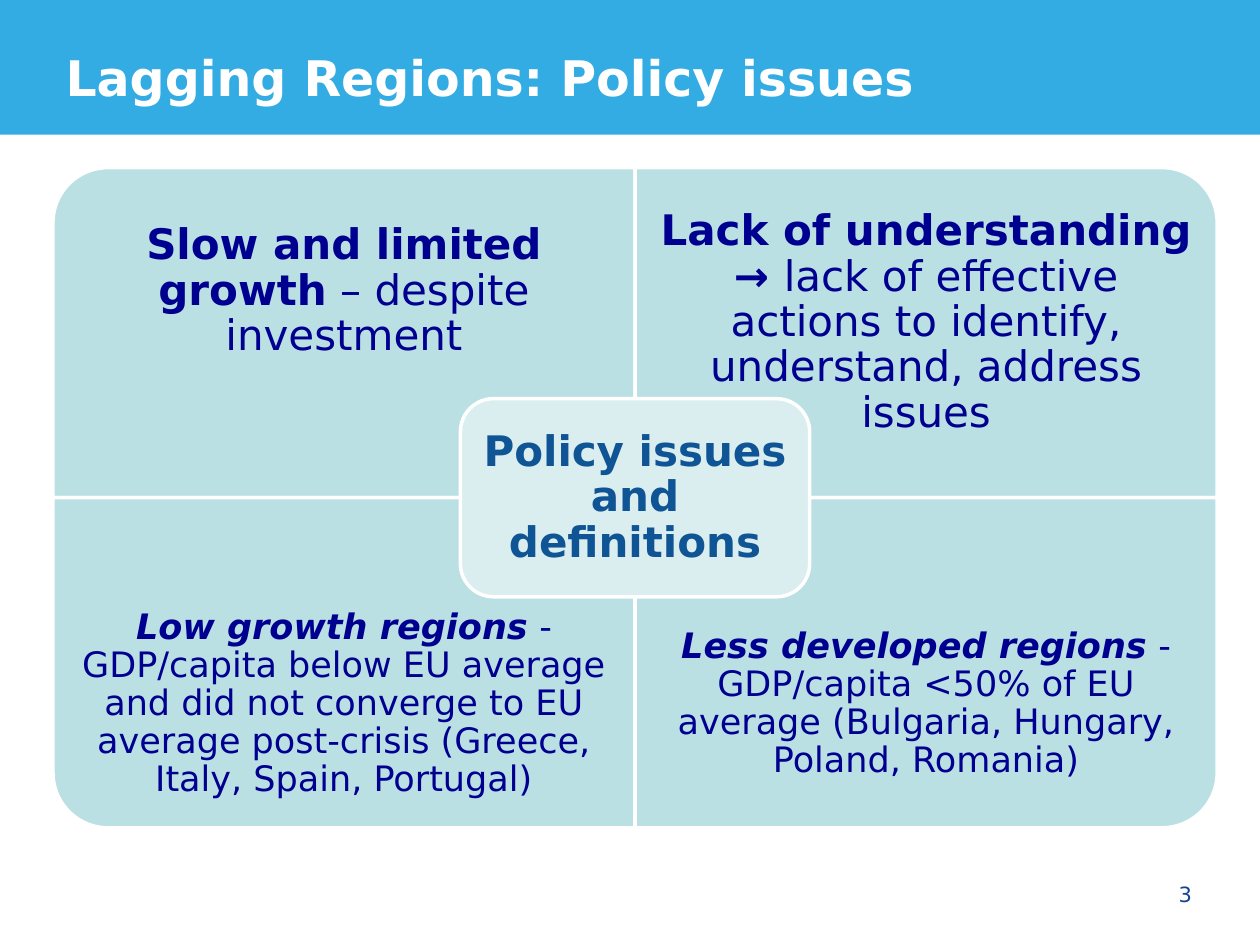
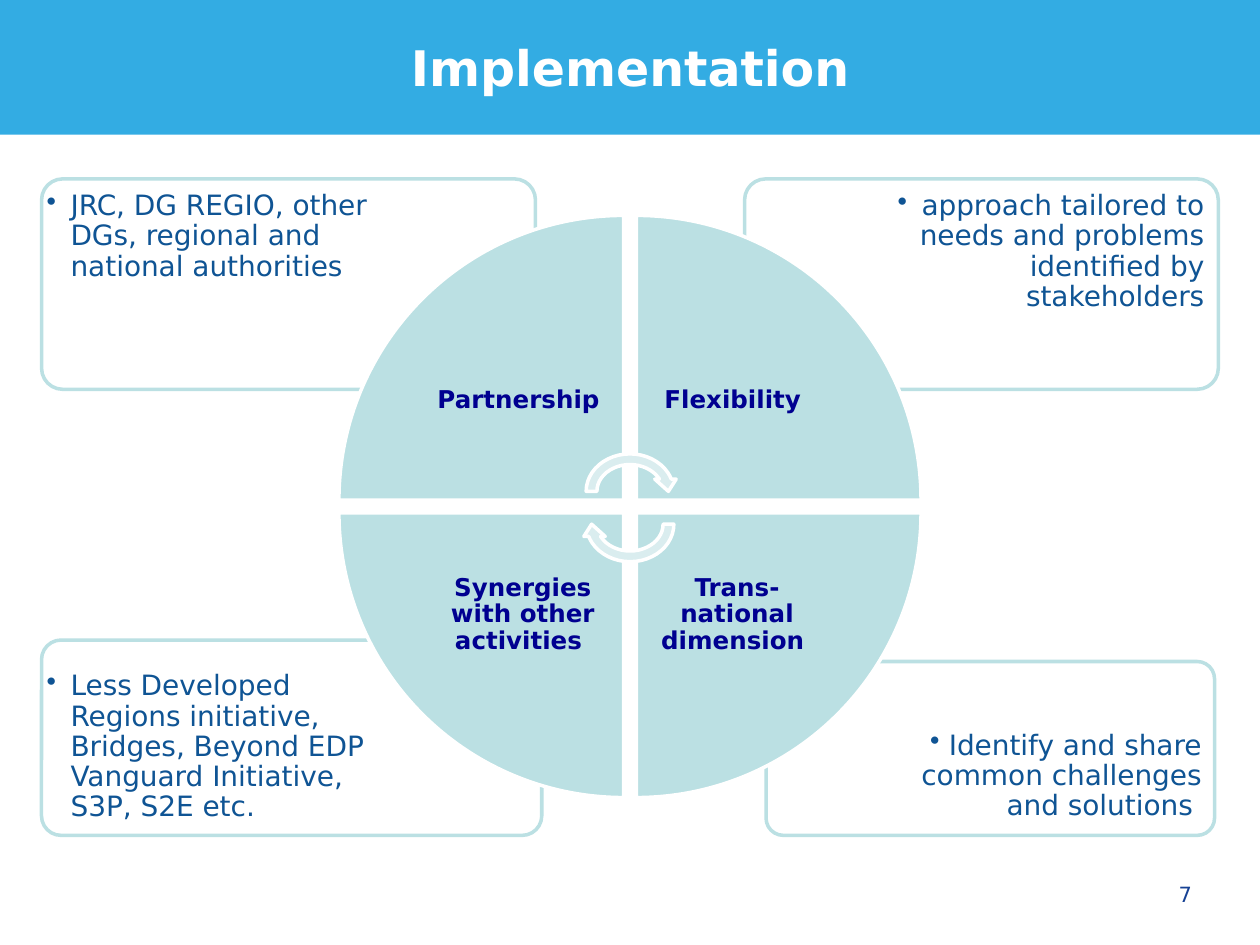
from lxml import etree
from pptx import Presentation
from pptx.dml.color import RGBColor
from pptx.enum.shapes import MSO_SHAPE
from pptx.enum.text import MSO_ANCHOR, MSO_AUTO_SIZE, PP_ALIGN
from pptx.oxml.ns import qn
from pptx.util import Inches, Pt

RECT, ROUND = MSO_SHAPE.RECTANGLE, MSO_SHAPE.ROUNDED_RECTANGLE
CORNER, WEDGE = MSO_SHAPE.ROUND_1_RECTANGLE, MSO_SHAPE.PIE_WEDGE
ARROW = MSO_SHAPE.CIRCULAR_ARROW
LEFT, MID, RIGHT = PP_ALIGN.LEFT, PP_ALIGN.CENTER, PP_ALIGN.RIGHT
TOP, HALF, BASE = MSO_ANCHOR.TOP, MSO_ANCHOR.MIDDLE, MSO_ANCHOR.BOTTOM

W, H = 10, 7.5
FACE = "DejaVu Sans"
HUE = {"band": "33ACE3", "teal": "BBE0E3", "pale": "DAEDEF", "white": "FFFFFF",
       "navy": "000090", "blue": "0F5494", "page": "164194"}
CELLS = [(0, 0), (0, 1), (1, 0), (1, 1)]  # row, column
TURNS = [0, 90, 270, 180]


def put(slide, kind, box, fill, line=None, turn=0):
    """Add a shape that fills the box after its turn."""
    x, y, w, h = box
    if turn in (90, 270):
        x, y, w, h = x + (w - h) / 2, y + (h - w) / 2, h, w
    shape = slide.shapes.add_shape(kind, *map(Inches, (x, y, w, h)))
    shape.rotation = turn
    shape.shadow.inherit = False
    shape.fill.solid()
    shape.fill.fore_color.rgb = RGBColor.from_string(HUE[fill])
    if line:
        shape.line.color.rgb = RGBColor.from_string(HUE[line])
        shape.line.width = Pt(2)
    else:
        shape.line.fill.background()
    return shape


def say(shape, box, runs, size, hue, align=MID, anchor=HALF, pad=(0, 0, 0, 0),
        space=0.9, dent=None):
    """Place a text holder and write runs of (text, font styles) in it."""
    for name, value in zip(("left", "top", "width", "height"), box):
        setattr(shape, name, Inches(value))
    frame = shape.text_frame
    look = {"word_wrap": True, "auto_size": MSO_AUTO_SIZE.NONE, "vertical_anchor": anchor}
    for side, value in zip(("left", "top", "right", "bottom"), pad):
        look["margin_" + side] = Inches(value)
    for name, value in look.items():
        setattr(frame, name, value)
    para = frame.paragraphs[0]
    para.alignment = align
    if dent is not None:
        props = para._p.get_or_add_pPr()
        props.set("marL", str(Inches(dent)))
        props.set("indent", str(-Inches(dent)))
        etree.SubElement(props, qn("a:buChar"), char="•")
    para.line_spacing = space
    for text, style in runs:
        run = para.add_run()
        run.text = text
        for name, value in {"name": FACE, "size": Pt(size), **style}.items():
            setattr(run.font, name, value)
        run.font.color.rgb = RGBColor.from_string(HUE[hue])


BOLD, PLAIN = {"bold": True}, {"bold": False}
SLANT = {"bold": True, "italic": True}

deck = Presentation()
deck.slide_width, deck.slide_height = Inches(W), Inches(H)

# Shared parts: title, page number and a band on the master
slides = []
for title, page, align, top in [("Lagging Regions: Policy issues", "3", LEFT, 0.33),
                                ("Implementation", "7", MID, 0.25)]:
    slide = deck.slides.add_slide(deck.slide_layouts[5])
    say(slide.shapes.title, (0.52, top, W - 1.04, 0.5), [(title, BOLD)], 28, "white",
        align, TOP, space=1.1)
    say(slide.shapes.add_textbox(0, 0, 0, 0), (7.23, 6.9, 2.33, 0.4), [(page, PLAIN)],
        12, "page", RIGHT, pad=(0.1, 0, 0.1, 0), space=1)
    slides.append(slide)
issues, action = slides
band = put(issues, RECT, (0, 0, W, 1.07), "band")
deck.slide_master.shapes._spTree.insert(2, band._element)

# Policy issues: four quarters around a centre label
COL, ROW = 4.62, 2.62
X, Y = 0.42, 1.33
DEEP = ROW * 0.75
quarters = [
    (24, 0.19, 0, [("Slow and limited growth", BOLD), (" – despite investment", PLAIN)]),
    (24, 0.19, 0.25, [("Lack of understanding → ", BOLD),
                      ("lack of effective actions to identify, understand, address issues",
                       PLAIN)]),
    (20, 0.16, 0, [("Low growth regions", SLANT),
                   (" - GDP/capita below EU average and did not converge to EU average "
                    "post-crisis (Greece, Italy, Spain, Portugal)", PLAIN)]),
    (20, 0.16, 0, [("Less developed regions", SLANT),
                   (" - GDP/capita <50% of EU average (Bulgaria, Hungary, Poland, Romania)",
                    PLAIN)]),
]
for (row, col), turn, (size, pad, drop, runs) in zip(CELLS, TURNS, quarters):
    x, y = X + col * COL, Y + row * ROW
    put(issues, CORNER, (x, y, COL, ROW), "teal", "white", (turn + 270) % 360)
    y += row * (ROW - DEEP) + drop
    say(issues.shapes.add_textbox(0, 0, 0, 0), (x, y, COL, DEEP), runs, size, "navy",
        pad=(pad, 0.05, pad, 0.05))
core = (X + COL * 0.7, Y + ROW * 0.7, COL * 0.6, ROW * 0.6)
put(issues, ROUND, core, "pale", "white")
say(issues.shapes.add_textbox(0, 0, 0, 0), (3.73, 3.24, 2.62, 1.43),
    [("Policy issues and definitions", BOLD)], 24, "blue", pad=[0.1] * 4)

# Implementation: four cards behind a wheel
cards = [
    ((0.33, 1.42, 3.92, 1.67), (0.37, 1.45, 2.67, 1.18), 0.19,
     "JRC, DG REGIO, other DGs, regional and national authorities"),
    ((5.91, 1.42, 3.76, 1.67), (7.07, 1.45, 2.56, 1.18), 0.19,
     "approach tailored to needs and problems identified by stakeholders"),
    ((0.33, 5.08, 3.97, 1.55), (0.37, 5.5, 2.71, 1.1), 0.19,
     "Less Developed Regions initiative, Bridges, Beyond EDP Vanguard Initiative, "
     "S3P, S2E etc."),
    ((6.08, 5.25, 3.56, 1.38), (7.18, 5.62, 2.43, 0.97), 0,
     " Identify and share common challenges and solutions "),
]
for (row, col), (frame, box, dent, text) in zip(CELLS, cards):
    card = put(action, ROUND, frame, "white", "teal")
    card.adjustments[0] = 0.1
    say(action.shapes.add_textbox(0, 0, 0, 0), box, [(text, PLAIN)], 16, "blue",
        (LEFT, RIGHT)[col], (TOP, BASE)[row], (0, 0.07, 0.07, 0.07), dent=dent)

SIDE, STEP = 2.26, 2.36
LABEL, PITCH = 1.6, 1.7
names = ["Partnership ", "Flexibility ", "Synergies with other activities ",
         "Trans-national dimension "]
for (row, col), turn, name in zip(CELLS, TURNS, names):
    put(action, WEDGE, (2.69 + col * STEP, 1.71 + row * STEP, SIDE, SIDE),
        "teal", "white", turn)
    say(action.shapes.add_textbox(0, 0, 0, 0),
        (3.35 + col * PITCH, 2.38 + row * PITCH, LABEL, LABEL),
        [(name, BOLD)], 14, "navy", pad=[0.11] * 4)
for top, turn in [(3.56, 0), (3.82, 180)]:
    put(action, ARROW, (4.61, top, 0.78, 0.68), "pale", "white", turn)

deck.save("out.pptx")
